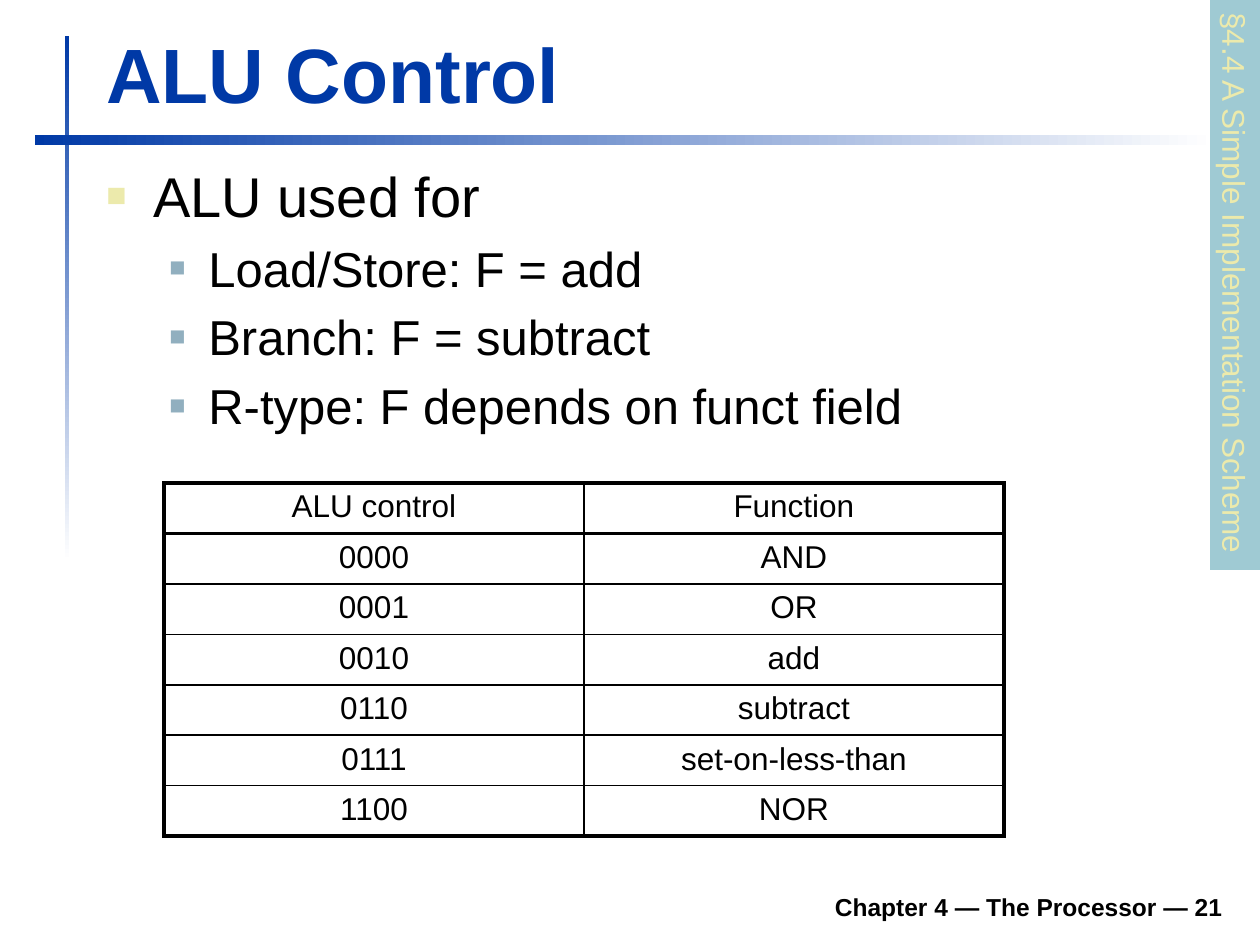
import pptx
import pptx.dml.color
import pptx.enum.shapes
import pptx.enum.text
import pptx.oxml
import pptx.oxml.ns
import pptx.util

PX = 914400 // 126
FONT = "Arial"
COLORS = {"blue": "0039A6", "white": "FFFFFF", "black": "000000",
          "cream": "ECEAAC", "steel": "91AFBF", "teal": "9FCAD3"}

TITLE = "ALU Control"
SECTION = "§4.4 A Simple Implementation Scheme"
FOOTER = "Chapter 4 — The Processor — 21"
BULLETS = [(0, "ALU used for"),
           (1, "Load/Store: F = add"),
           (1, "Branch: F = subtract"),
           (1, "R-type: F depends on funct field")]
# per level: text size, left indent px, hanging px, bullet colour, bullet size %
LEVELS = [(32, 47, 47, "cream", 60), (28, 102, 39, "steel", 55)]
ALU_FUNCTIONS = [("ALU control", "Function"),
                 ("0000", "AND"),
                 ("0001", "OR"),
                 ("0010", "add"),
                 ("0110", "subtract"),
                 ("0111", "set-on-less-than"),
                 ("1100", "NOR")]
# left, top, width, height, gradient angle
RULES = [(65, 36, 4, 525, 270), (35, 135, 1180, 10, 0)]
OUTER, HEADER, INNER = 2.25, 1.5, 1

ALIGN = pptx.enum.text.PP_ALIGN
ANCHOR = pptx.enum.text.MSO_ANCHOR


def rgb(name):
    return pptx.dml.color.RGBColor.from_string(COLORS[name])


def px(*lengths):
    return [pptx.util.Emu(n * PX) for n in lengths]


def xml(tag, attrs="", inner=""):
    ns = pptx.oxml.ns.nsdecls("a")
    return pptx.oxml.parse_xml(f"<a:{tag} {ns} {attrs}>{inner}</a:{tag}>")


def color_xml(name):
    return f'<a:srgbClr val="{COLORS[name]}"/>'


def add_run(p, text, size, color="black", bold=False):
    r = p.add_run()
    r.text = text
    r.font.name = FONT
    r.font.size = pptx.util.Pt(size)
    r.font.bold = bold
    r.font.color.rgb = rgb(color)


def space_before(p):
    """Leave 20% of the line above the paragraph."""
    p._p.get_or_add_pPr().append(xml("spcBef", inner='<a:spcPct val="20000"/>'))


def add_text(s, box, anchor):
    tf = s.shapes.add_textbox(*px(*box)).text_frame
    tf.word_wrap = True
    tf.vertical_anchor = anchor
    return tf


def add_rect(s, box):
    sp = s.shapes.add_shape(pptx.enum.shapes.MSO_SHAPE.RECTANGLE, *px(*box))
    sp.shadow.inherit = False
    sp.line.fill.background()
    return sp


def add_rules(s):
    for *box, angle in RULES:
        fill = add_rect(s, box).fill
        fill.gradient()
        fill.gradient_angle = angle
        for stop, name in zip(fill.gradient_stops, ("blue", "white")):
            stop.color.rgb = rgb(name)


def add_bullets(s):
    tf = add_text(s, (94, 155, 1140, 328), ANCHOR.TOP)
    for i, (level, text) in enumerate(BULLETS):
        size, left, hang, color, percent = LEVELS[level]
        p = tf.add_paragraph() if i else tf.paragraphs[0]
        p.level = level
        space_before(p)
        pPr = p._p.get_or_add_pPr()
        pPr.set("marL", str(left * PX))
        pPr.set("indent", str(-hang * PX))
        pPr.append(xml("buClr", inner=color_xml(color)))
        pPr.append(xml("buSzPct", f'val="{percent * 1000}"'))
        pPr.append(xml("buFont", f'typeface="{FONT}"'))
        pPr.append(xml("buChar", 'char="■"'))
        add_run(p, text, size)


def add_section_tab(s):
    sp = add_rect(s, (950, 260, 570, 50))
    sp.rotation = 90
    sp.fill.solid()
    sp.fill.fore_color.rgb = rgb("teal")
    tf = sp.text_frame
    tf.word_wrap = False
    tf.auto_size = pptx.enum.text.MSO_AUTO_SIZE.SHAPE_TO_FIT_TEXT
    p = tf.paragraphs[0]
    p.alignment = ALIGN.LEFT
    add_run(p, SECTION, 18, "cream")


def set_borders(cell, widths):
    tcPr = cell._tc.get_or_add_tcPr()
    for i, (side, width) in enumerate(zip("LRTB", widths)):
        fill = f"<a:solidFill>{color_xml('black')}</a:solidFill>"
        tcPr.insert(i, xml(f"ln{side}", f'w="{int(width * 12700)}"', fill))


def add_function_table(s):
    rows, cols = len(ALU_FUNCTIONS), len(ALU_FUNCTIONS[0])
    row_h, col_w = px(50.4, 420)
    row_h, col_w = int(row_h), int(col_w)
    left, top = px(164, 483)
    table = s.shapes.add_table(rows, cols, left, top,
                               col_w * cols, row_h * rows).table
    table.first_row = table.horz_banding = False
    for column in table.columns:
        column.width = col_w
    # widths of the horizontal lines, top to bottom, and vertical, left to right
    across = [OUTER, HEADER] + [INNER] * (rows - 2) + [OUTER]
    down = [OUTER] + [INNER] * (cols - 1) + [OUTER]
    for i, texts in enumerate(ALU_FUNCTIONS):
        table.rows[i].height = row_h
        for j, text in enumerate(texts):
            cell = table.cell(i, j)
            cell.fill.background()
            set_borders(cell, (down[j], down[j + 1], across[i], across[i + 1]))
            p = cell.text_frame.paragraphs[0]
            p.alignment = ALIGN.CENTER
            space_before(p)
            add_run(p, text, 18)


def main():
    prs = pptx.Presentation()
    prs.slide_width, prs.slide_height = px(1260, 945)
    s = prs.slides.add_slide(prs.slide_layouts[6])
    add_rules(s)
    p = add_text(s, (233, 879, 1002, 49), ANCHOR.BOTTOM).paragraphs[0]
    p.alignment = ALIGN.RIGHT
    add_run(p, FOOTER, 14, bold=True)
    p = add_text(s, (94, 20, 1138, 105), ANCHOR.BOTTOM).paragraphs[0]
    add_run(p, TITLE, 44, "blue", bold=True)
    add_bullets(s)
    add_section_tab(s)
    add_function_table(s)
    prs.save("out.pptx")


if __name__ == "__main__":
    main()
